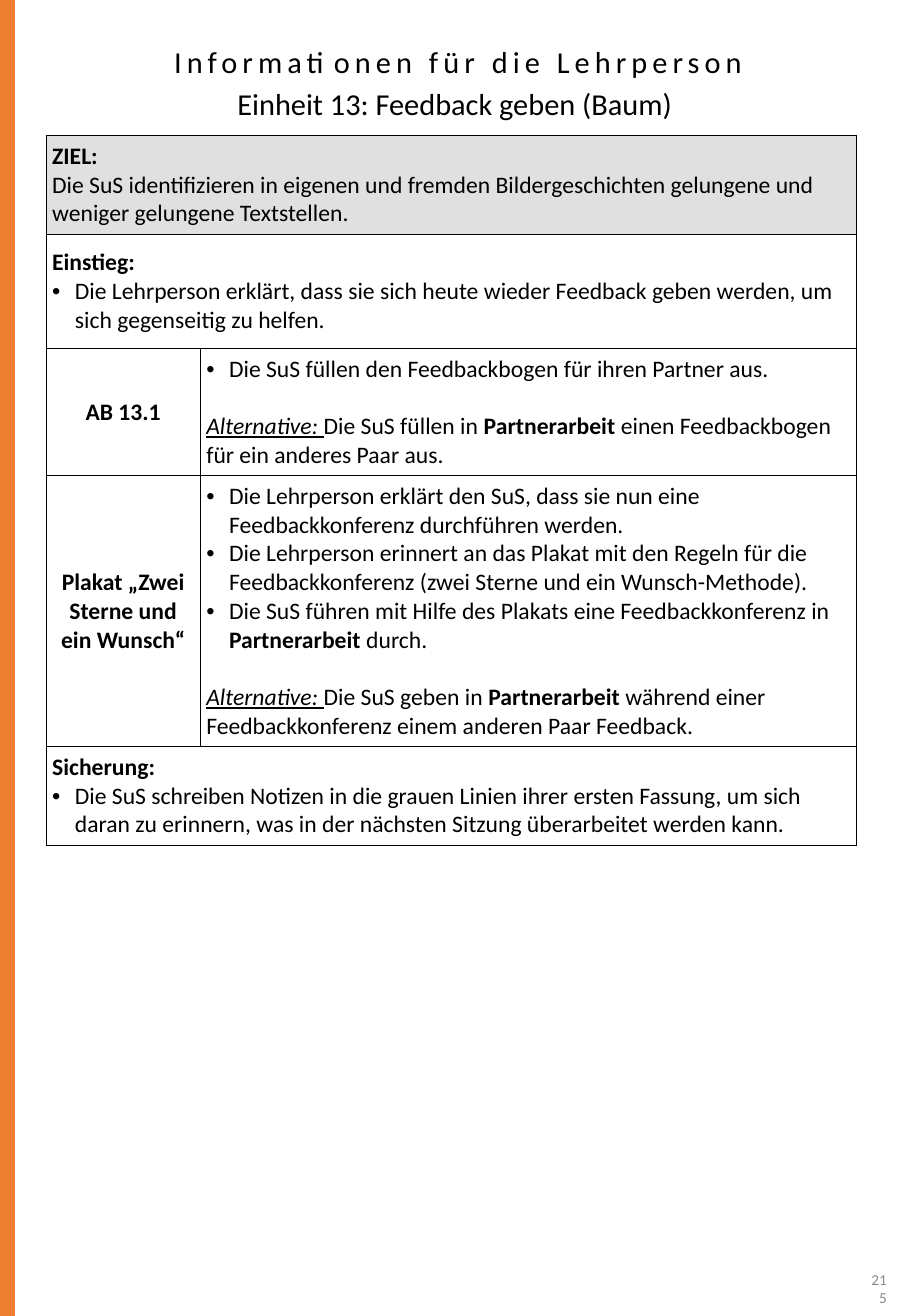
"""Build the teacher information page for unit 13, giving feedback."""
from typing import NamedTuple

from lxml import etree
from pptx import Presentation
from pptx import util as u
from pptx.dml.color import RGBColor
from pptx.enum import shapes, text
from pptx.oxml import ns

BLACK = RGBColor(0x00, 0x00, 0x00)
WHITE = RGBColor(0xFF, 0xFF, 0xFF)
PALE = RGBColor(0xE0, 0xE0, 0xE0)
GREY = RGBColor(0x88, 0x88, 0x88)
ORANGE = RGBColor(0xED, 0x7D, 0x31)
FONT = "Calibri"
PAGE_WIDTH, PAGE_HEIGHT = 540, 780
INSET = 3.6
BODY_SIZE = 14
INDENT = 13.5
GAP = 17
BORDER = 0.75
TABLE_LEFT, TABLE_TOP = 27.3, 80.4
COLUMNS = (91.4, 388.8)
STRIPE_X, STRIPE_WIDTH = 3.6, 10


class Span(NamedTuple):
    words: str
    bold: bool = False
    stressed: bool = False


class Para(NamedTuple):
    spans: list[Span]
    bullet: bool = False
    gap: float = 0
    align: text.PP_ALIGN = text.PP_ALIGN.LEFT


class Row(NamedTuple):
    height: float
    cells: list[list[Para]]
    fill: RGBColor = WHITE


class Label(NamedTuple):
    words: str
    left: float
    top: float
    width: float
    height: float
    size: float = 18
    color: RGBColor = BLACK
    align: text.PP_ALIGN = text.PP_ALIGN.CENTER
    anchor: text.MSO_ANCHOR = text.MSO_ANCHOR.TOP
    spacing: float = 0


def heading(words: str, align: text.PP_ALIGN = text.PP_ALIGN.LEFT) -> Para:
    return Para([Span(words, bold=True)], align=align)


def side(words: str) -> list[Para]:
    return [heading(words, text.PP_ALIGN.CENTER)]


def bullet(*spans: Span) -> Para:
    return Para(list(spans), bullet=True)


def alternative(start: str, end: str) -> Para:
    return Para([Span("Alternative: ", stressed=True), Span(start), PARTNER, Span(end)], gap=GAP)


PARTNER = Span("Partnerarbeit", bold=True)
ROWS = [
    Row(58.5, [[
        heading("ZIEL:"),
        Para([Span("Die SuS identifizieren in eigenen und fremden Bildergeschichten "
                   "gelungene und weniger gelungene Textstellen.")]),
    ]], PALE),
    Row(67.7, [[
        heading("Einstieg:"),
        bullet(Span("Die Lehrperson erklärt, dass sie sich heute wieder Feedback geben "
                    "werden, um sich gegenseitig zu helfen.")),
    ]]),
    Row(75.3, [side("AB 13.1"), [
        bullet(Span("Die SuS füllen den Feedbackbogen für ihren Partner aus.")),
        alternative("Die SuS füllen in ", " einen Feedbackbogen für ein anderes Paar aus."),
    ]]),
    Row(160.7, [side("Plakat „Zwei Sterne und ein Wunsch“"), [
        bullet(Span("Die Lehrperson erklärt den SuS, dass sie nun eine "
                    "Feedbackkonferenz durchführen werden.")),
        bullet(Span("Die Lehrperson erinnert an das Plakat mit den Regeln für die "
                    "Feedbackkonferenz (zwei Sterne und ein Wunsch-Methode).")),
        bullet(Span("Die SuS führen mit Hilfe des Plakats eine Feedbackkonferenz in "),
               PARTNER, Span(" durch.")),
        alternative("Die SuS geben in ",
                    " während einer Feedbackkonferenz einem anderen Paar Feedback."),
    ]]),
    Row(58.5, [[
        heading("Sicherung:"),
        bullet(Span("Die SuS schreiben Notizen in die grauen Linien ihrer ersten Fassung, "
                    "um sich daran zu erinnern, was in der nächsten Sitzung überarbeitet "
                    "werden kann.")),
    ]]),
]
LABELS = [
    Label("Einheit 13: Feedback geben (Baum)", 10.1, 46.8, 519, 28.8),
    Label("Informationen für die Lehrperson", 12.2, 22.3, 519, 28.8, spacing=3),
    Label("215", 511.9, 754.6, 17.3, 18, 9, GREY, text.PP_ALIGN.RIGHT, text.MSO_ANCHOR.MIDDLE),
]


def style_run(run, size: float, color: RGBColor) -> None:
    run.font.name = FONT
    run.font.size = u.Pt(size)
    run.font.color.rgb = color


def set_insets(holder) -> None:
    holder.margin_left = holder.margin_right = u.Pt(INSET)
    holder.margin_top = holder.margin_bottom = u.Pt(INSET)


def add_bullet(paragraph) -> None:
    properties = paragraph._p.get_or_add_pPr()
    properties.set("marL", str(u.Pt(INDENT)))
    properties.set("indent", str(-u.Pt(INDENT)))
    etree.SubElement(properties, ns.qn("a:buFont")).set("typeface", "Arial")
    etree.SubElement(properties, ns.qn("a:buChar")).set("char", "•")


def write_cell(cell, paras: list[Para]) -> None:
    frame = cell.text_frame
    for index, para in enumerate(paras):
        paragraph = frame.add_paragraph() if index else frame.paragraphs[0]
        paragraph.alignment = para.align
        if para.gap:
            paragraph.space_before = u.Pt(para.gap)
        if para.bullet:
            add_bullet(paragraph)
        for span in para.spans:
            run = paragraph.add_run()
            run.text = span.words
            style_run(run, BODY_SIZE, BLACK)
            run.font.bold = span.bold
            run.font.italic = run.font.underline = span.stressed


def style_cell(cell, fill: RGBColor) -> None:
    properties = cell._tc.get_or_add_tcPr()
    for edge in ("lnL", "lnR", "lnT", "lnB"):
        line = etree.SubElement(properties, ns.qn(f"a:{edge}"), w=str(u.Pt(BORDER)))
        solid = etree.SubElement(line, ns.qn("a:solidFill"))
        etree.SubElement(solid, ns.qn("a:srgbClr"), val=str(BLACK))
    cell.fill.solid()
    cell.fill.fore_color.rgb = fill
    cell.vertical_anchor = text.MSO_ANCHOR.MIDDLE
    set_insets(cell)


def draw_table(page, rows: list[Row]) -> None:
    height = sum(row.height for row in rows)
    table = page.shapes.add_table(len(rows), len(COLUMNS), u.Pt(TABLE_LEFT), u.Pt(TABLE_TOP),
                                  u.Pt(sum(COLUMNS)), u.Pt(height)).table
    table.first_row = table.horz_banding = False
    for column, width in zip(table.columns, COLUMNS):
        column.width = u.Pt(width)
    for index, row in enumerate(rows):
        table.rows[index].height = u.Pt(row.height)
        for cell in table.rows[index].cells:
            style_cell(cell, row.fill)
        if len(row.cells) == 1:
            table.cell(index, 0).merge(table.cell(index, len(COLUMNS) - 1))
        for position, paras in enumerate(row.cells):
            write_cell(table.cell(index, position), paras)


def draw_label(page, label: Label) -> None:
    box = page.shapes.add_textbox(u.Pt(label.left), u.Pt(label.top),
                                  u.Pt(label.width), u.Pt(label.height))
    frame = box.text_frame
    frame.text = label.words
    frame.word_wrap = True
    frame.vertical_anchor = label.anchor
    set_insets(frame)
    paragraph = frame.paragraphs[0]
    paragraph.alignment = label.align
    run = paragraph.runs[0]
    style_run(run, label.size, label.color)
    if label.spacing:
        run.font._element.set("spc", str(round(label.spacing * 100)))


def draw_stripe(page) -> None:
    stripe = page.shapes.add_connector(shapes.MSO_CONNECTOR.STRAIGHT, u.Pt(STRIPE_X), u.Pt(0),
                                       u.Pt(STRIPE_X), u.Pt(PAGE_HEIGHT))
    stripe.line.color.rgb = ORANGE
    stripe.line.width = u.Pt(STRIPE_WIDTH)
    etree.SubElement(stripe._element.spPr, ns.qn("a:effectLst"))


def main() -> None:
    deck = Presentation()
    deck.slide_width, deck.slide_height = u.Pt(PAGE_WIDTH), u.Pt(PAGE_HEIGHT)
    page = deck.slides.add_slide(deck.slide_layouts[6])
    draw_table(page, ROWS)
    for label in LABELS:
        draw_label(page, label)
    draw_stripe(page)
    deck.save("out.pptx")


if __name__ == "__main__":
    main()
